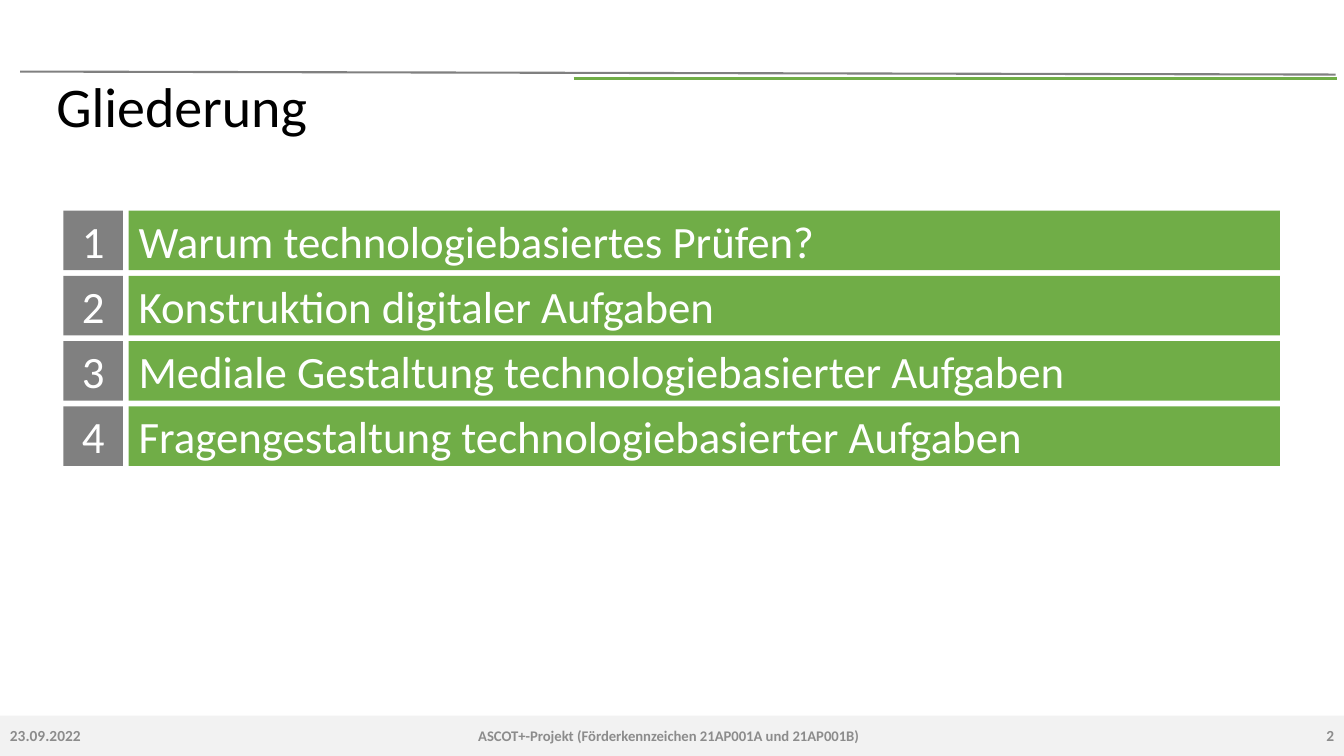
from dataclasses import dataclass

from lxml import etree
from pptx import Presentation
from pptx import util as u
from pptx.dml import color
from pptx.enum import shapes, text
from pptx.oxml import ns


@dataclass(frozen=True)
class Theme:
    font: str = "Calibri"
    green: str = "70AD47"
    grey: str = "808080"
    band: str = "F2F2F2"
    muted: str = "8C8C8C"
    black: str = "000000"
    white: str = "FFFFFF"
    title: float = 40
    agenda: float = 32
    footer: float = 11
    footer_small: float = 10.5


LEFT, CENTER, RIGHT = text.PP_ALIGN.LEFT, text.PP_ALIGN.CENTER, text.PP_ALIGN.RIGHT
COLS, ROWS = 133.33, 75  # grid of 0.1 inch cells


class Deck:
    def __init__(self, theme):
        self.theme = theme
        self.prs = Presentation()
        self.prs.slide_width, self.prs.slide_height = u.Inches(13.33), u.Inches(7.5)
        self.s = self.prs.slides.add_slide(self.prs.slide_layouts[6])

    def grid(self, *cells):
        """Turn alternating column and row counts into lengths."""
        units = (self.prs.slide_width / COLS, self.prs.slide_height / ROWS)
        return [u.Emu(round(c * units[i % 2])) for i, c in enumerate(cells)]

    def add_text(self, sp, words, size, rgb, align=LEFT, bold=False, spacing=None):
        tf = sp.text_frame
        tf.word_wrap = True
        tf.vertical_anchor = text.MSO_ANCHOR.MIDDLE
        p = tf.paragraphs[0]
        p.alignment, p.line_spacing = align, spacing
        r = p.add_run()
        r.text = words
        r.font.name, r.font.size, r.font.bold = self.theme.font, u.Pt(size), bold
        r.font.color.rgb = color.RGBColor.from_string(rgb)

    def label(self, box, words, size, rgb, **style):
        sp = self.s.shapes.add_textbox(*self.grid(*box))
        self.add_text(sp, words, size, rgb, **style)

    def rect(self, box, fill):
        sp = self.s.shapes.add_shape(shapes.MSO_SHAPE.RECTANGLE, *self.grid(*box))
        sp.shadow.inherit = False
        sp.fill.solid()
        sp.fill.fore_color.rgb = color.RGBColor.from_string(fill)
        sp.line.fill.background()
        return sp

    def line(self, ends, rgb, width):
        cx = self.s.shapes.add_connector(shapes.MSO_CONNECTOR.STRAIGHT, *self.grid(*ends))
        cx.line.color.rgb = color.RGBColor.from_string(rgb)
        cx.line.width = u.Pt(width)
        etree.SubElement(cx._element.spPr, ns.qn("a:effectLst"))


def main():
    t = Theme()
    deck = Deck(t)

    # Header lines and title
    deck.line((2, 7.1, 132.5, 7.4), t.grey, 1.5)
    deck.line((56.9, 7.8, 132.6, 7.8), t.green, 2.25)
    deck.label((4.6, 7.9, 122, 5.9), "Gliederung", t.title, t.black, spacing=0.9)

    # Numbered agenda
    left, top, side, gap, bar_width = 6.3, 20.9, 5.9, 0.57, 114.2
    agenda = (
        "Warum technologiebasiertes Prüfen?",
        "Konstruktion digitaler Aufgaben",
        "Mediale Gestaltung technologiebasierter Aufgaben",
        "Fragengestaltung technologiebasierter Aufgaben",
    )
    for i, topic in enumerate(agenda):
        y = top + i * (side + gap)
        number = deck.rect((left, y, side, side), t.grey)
        deck.add_text(number, str(i + 1), t.agenda, t.white, align=CENTER)
        bar = deck.rect((left + side + gap, y, bar_width, side), t.green)
        deck.add_text(bar, topic, t.agenda, t.white)

    # Footer band
    deck.rect((0, 71, COLS, 4), t.band)
    footer = (
        (0, 17, "23.09.2022", t.footer, LEFT),
        (17, 98.7, "ASCOT+-Projekt (Förderkennzeichen 21AP001A und 21AP001B)",
         t.footer_small, CENTER),
        (116.93, 16.4, "2", t.footer, RIGHT),
    )
    for x, width, words, size, align in footer:
        deck.label((x, 71, width, 4), words, size, t.muted, align=align, bold=True)

    deck.prs.save("out.pptx")


if __name__ == "__main__":
    main()
